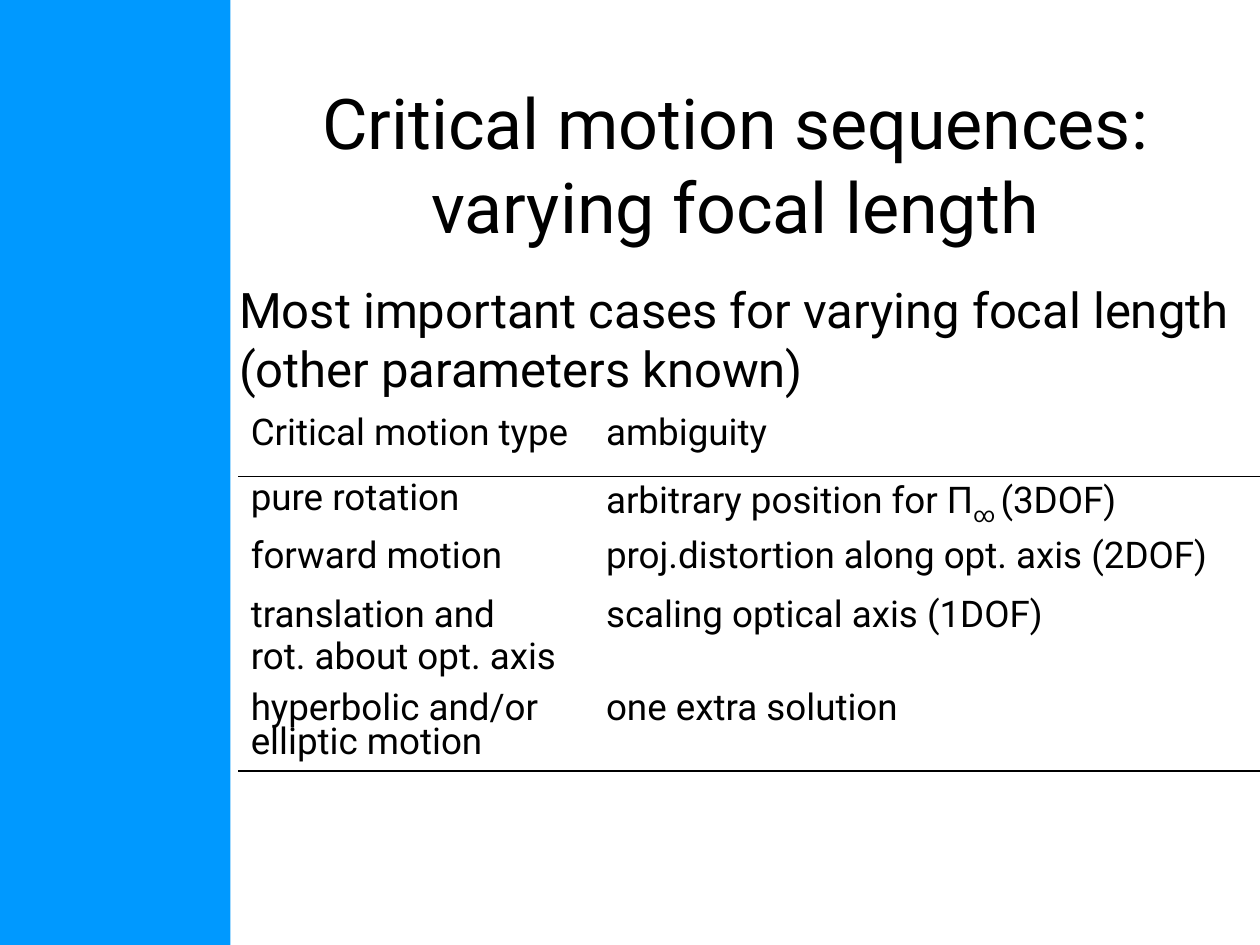
"""Build a slide on critical motion sequences for varying focal length."""
from dataclasses import dataclass

from lxml import etree
from pptx import Presentation
from pptx.dml.color import RGBColor
from pptx.enum.shapes import MSO_SHAPE
from pptx.enum.text import MSO_ANCHOR, PP_ALIGN
from pptx.oxml.ns import qn
from pptx.util import Inches, Pt

BLUE = RGBColor(0x00, 0x99, 0xFF)
BLACK = RGBColor(0x00, 0x00, 0x00)
FONT = "Roboto"
RECTANGLE = MSO_SHAPE.RECTANGLE
MIDDLE, TOP = MSO_ANCHOR.MIDDLE, MSO_ANCHOR.TOP
CENTER, LEFT = PP_ALIGN.CENTER, PP_ALIGN.LEFT
TITLE_ONLY = 5
COLUMN_WIDTHS = (2.82, 5.3)


@dataclass(frozen=True)
class MotionRow:
    """One table row; "_" encloses subscript text."""

    motion: str
    ambiguity: str
    height: float
    ruled: bool = False


ROWS = (
    MotionRow("Critical motion type", "ambiguity", 0.51, ruled=True),
    MotionRow("pure rotation", "arbitrary position for Π_∞ _(3DOF)", 0.46),
    MotionRow("forward motion", "proj.distortion along opt. axis (2DOF)", 0.47),
    MotionRow("translation and\nrot. about opt. axis", "scaling optical axis (1DOF)", 0.74),
    MotionRow("hyperbolic and/or elliptic motion", "one extra solution", 0.67, ruled=True),
)


def write_text(frame, text: str, *, size: float, align=LEFT, anchor=TOP,
               spacing: float = 1.0, space_before: float = 0) -> None:
    """Write paragraphs split at newlines, with subscripts between underscores."""
    frame.word_wrap = True
    frame.vertical_anchor = anchor
    for index, line in enumerate(text.split("\n")):
        para = frame.add_paragraph() if index else frame.paragraphs[0]
        para.alignment = align
        para.line_spacing = spacing
        para.space_before = Pt(space_before if index else 0)
        for part, words in enumerate(line.split("_")):
            for piece, content in enumerate(words.split("\v")):
                if piece:
                    para.add_line_break()
                span = para.add_run()
                span.text = content
                span.font.name = FONT
                span.font.size = Pt(size)
                span.font.color.rgb = BLACK
                if part % 2:
                    span.font._element.set("baseline", "-25000")


def set_borders(cell, top: bool, bottom: bool) -> None:
    """Draw thin black rules on the chosen edges and clear the others."""
    properties = cell._tc.get_or_add_tcPr()
    for side, visible in (("L", False), ("R", False), ("T", top), ("B", bottom)):
        line = etree.SubElement(properties, qn(f"a:ln{side}"), w=str(Pt(1)))
        if visible:
            fill = etree.SubElement(line, qn("a:solidFill"))
            etree.SubElement(fill, qn("a:srgbClr"), val=str(BLACK))
        else:
            etree.SubElement(line, qn("a:noFill"))


def add_motion_table(page, rows: tuple[MotionRow, ...]) -> None:
    """Add the table of motion types and their ambiguities."""
    table = page.shapes.add_table(
        len(rows), len(COLUMN_WIDTHS), Inches(1.89), Inches(3.27),
        Inches(sum(COLUMN_WIDTHS)), Inches(sum(row.height for row in rows))).table
    table.first_row = table.horz_banding = False
    for column, width in zip(table.columns, COLUMN_WIDTHS):
        column.width = Inches(width)
    for index, row in enumerate(rows):
        table.rows[index].height = Inches(row.height)
        below_rule = index > 0 and rows[index - 1].ruled
        for column, text in enumerate((row.motion, row.ambiguity)):
            cell = table.cell(index, column)
            set_borders(cell, below_rule, row.ruled)
            cell.fill.background()
            write_text(cell.text_frame, text, size=21, spacing=0.8, space_before=4.2)
            cell.vertical_anchor = TOP


def main() -> None:
    """Build and save the deck."""
    deck = Presentation()
    deck.slide_width, deck.slide_height = Inches(10), Inches(7.5)
    page = deck.slides.add_slide(deck.slide_layouts[TITLE_ONLY])

    band = page.shapes.add_shape(RECTANGLE, 0, 0, Inches(1.83), deck.slide_height)
    band.shadow.inherit = False
    band.fill.solid()
    band.fill.fore_color.rgb = BLUE
    band.line.fill.background()

    title = page.shapes.title
    title.left, title.top = Inches(1.92), Inches(0.67)
    title.width, title.height = Inches(7.83), Inches(1.25)
    write_text(title.text_frame, "Critical motion sequences:\vvarying focal length",
               size=40, align=CENTER, anchor=MIDDLE)

    intro = page.shapes.add_textbox(Inches(1.8), Inches(2.17), Inches(8.2), Inches(1.05))
    write_text(intro.text_frame,
               "Most important cases for varying focal length (other parameters known)", size=28)

    add_motion_table(page, ROWS)
    deck.save("out.pptx")


if __name__ == "__main__":
    main()
